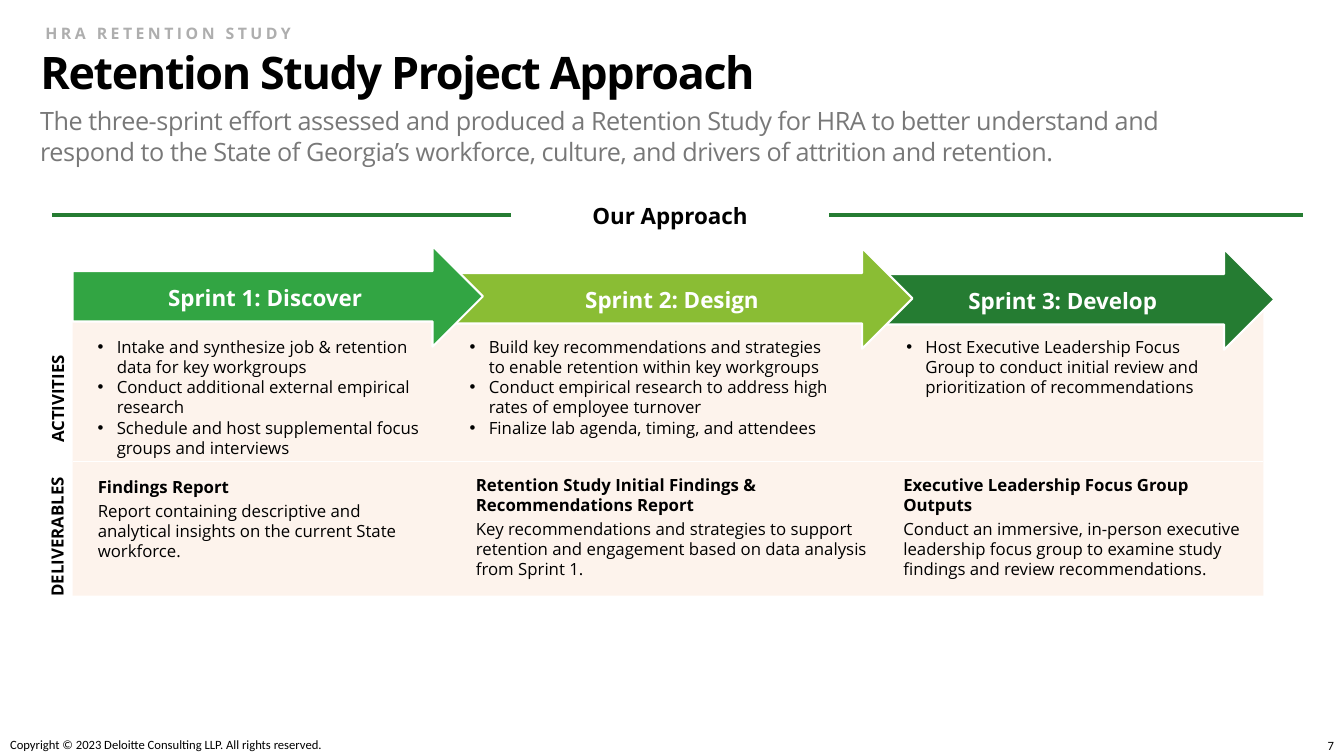
import pptx
import pptx.util
import pptx.dml.color
import pptx.enum.shapes
import pptx.enum.text
import pptx.oxml
import pptx.oxml.ns

Pt = pptx.util.Pt
Kind = pptx.enum.shapes.MSO_SHAPE
Align = pptx.enum.text.PP_ALIGN
Anchor = pptx.enum.text.MSO_ANCHOR
qn = pptx.oxml.ns.qn

COLORS = {
    "black": "000000", "white": "FFFFFF", "gray": "787878", "pale": "AEAEAE",
    "cream": "FCE6D6", "green": "32A543", "lime": "8ABD34", "forest": "257C32",
}
INSET = (1, 0.5, 1, 0.5)
TIGHT = (0.5, 0.5, 0.5, 0.5)
NONE = (0, 0, 0, 0)


def paint(name):
    return pptx.dml.color.RGBColor.from_string(COLORS[name])


def child(parent, tag, **attrs):
    node = parent.makeelement(qn(tag), attrs)
    parent.append(node)
    return node


class Board:
    """Draws on one slide; every length counts cells of a 0.1 inch grid."""

    def __init__(self, deck, font="Open Sans"):
        self.slide = deck.slides.add_slide(deck.slide_layouts[5])
        self.shapes = self.slide.shapes
        self.font = font

    def cells(self, *counts):
        return [pptx.util.Inches(count / 10) for count in counts]

    def label(self, shape, lines, size=12, color="black", bold=False, align=Align.LEFT,
              anchor=Anchor.TOP, inset=INSET, track=0, font=None, space=None,
              gap=0, bullet=False):
        """Fill a shape; each line is text or a (text, bold) pair."""
        frame = shape.text_frame
        frame.word_wrap = True
        frame.auto_size = pptx.enum.text.MSO_AUTO_SIZE.NONE
        frame.vertical_anchor = anchor
        (frame.margin_left, frame.margin_top,
         frame.margin_right, frame.margin_bottom) = self.cells(*inset)
        for i, line in enumerate(lines):
            text, heavy = (line, bold) if isinstance(line, str) else line
            para = frame.add_paragraph() if i else frame.paragraphs[0]
            para.alignment = align
            para.space_before = Pt(gap if i else 0)
            if space:
                para.line_spacing = space
            if bullet:
                props = para._p.get_or_add_pPr()
                indent = pptx.util.Inches(0.19)
                props.set("marL", str(indent))
                props.set("indent", str(-indent))
                child(props, "a:buFont", typeface="Arial")
                child(props, "a:buChar", char="•")
            run = para.add_run()
            run.text = text
            run.font.name = font or self.font
            run.font.size = Pt(size)
            run.font.bold = heavy
            run.font.color.rgb = paint(color)
            if track:
                run._r.get_or_add_rPr().set("spc", str(round(track * 100)))

    def title(self, box, text, **style):
        shape = self.shapes.title
        shape.left, shape.top, shape.width, shape.height = self.cells(*box)
        self.label(shape, [text], anchor=Anchor.MIDDLE, **style)

    def text(self, box, *lines, **style):
        self.label(self.shapes.add_textbox(*self.cells(*box)), lines, **style)

    def side(self, mid, row, length, text):
        """Label that reads upward, centred on a column and row."""
        box = self.cells(mid - length / 2, row - 1.5, length, 3)
        shape = self.shapes.add_textbox(*box)
        shape.rotation = 270
        self.label(shape, [text], bold=True)

    def block(self, kind, box, fill, edge=None, alpha=None):
        shape = self.shapes.add_shape(kind, *self.cells(*box))
        shape.shadow.inherit = False
        shape.fill.solid()
        shape.fill.fore_color.rgb = paint(fill)
        if alpha:
            tint = shape._element.spPr.find(qn("a:solidFill"))[0]
            child(tint, "a:alpha", val=str(alpha * 1000))
        if edge:
            shape.line.color.rgb = paint(edge)
            shape.line.width = Pt(1.5)
        else:
            shape.line.fill.background()
        return shape

    def rule(self, left, right, row, color, width):
        line = self.shapes.add_connector(
            pptx.enum.shapes.MSO_CONNECTOR.STRAIGHT, *self.cells(left, row, right, row))
        line.line.color.rgb = paint(color)
        line.line.width = Pt(width)
        child(line._element.spPr, "a:effectLst")


# Each sprint: name, colour, arrow box, activities box and list, deliverable box and pair
SPRINTS = [
    ("Sprint 1: Discover", "green", (7.2, 24.4, 40.7, 10),
     (8.7, 32.9, 35, 13.1),
     ["Intake and synthesize job & retention data for key workgroups",
      "Conduct additional external empirical research",
      "Schedule and host supplemental focus groups and interviews"],
     (9.2, 46.8, 34.3, 9.5),
     ("Findings Report",
      "Report containing descriptive and analytical insights on the current State workforce.")),
    ("Sprint 2: Design", "lime", (45.3, 24.6, 45.2, 10),
     (45.6, 32.9, 37.2, 11.1),
     ["Build key recommendations and strategies to enable retention within key workgroups",
      "Conduct empirical research to address high rates of employee turnover",
      "Finalize lab agenda, timing, and attendees"],
     (46.7, 46.6, 40.2, 11.5),
     ("Retention Study Initial Findings & Recommendations Report",
      "Key recommendations and strategies to support retention and engagement "
      "based on data analysis from Sprint 1.")),
    ("Sprint 3: Develop", "forest", (86.9, 24.7, 39.5, 10),
     (88.9, 32.9, 31.5, 7.1),
     ["Host Executive Leadership Focus Group to conduct initial review and "
      "prioritization of recommendations"],
     (89.1, 46.6, 35.7, 11.4),
     ("Executive Leadership Focus Group Outputs",
      "Conduct an immersive, in-person executive leadership focus group to examine "
      "study findings and review recommendations.")),
]


def main():
    deck = pptx.Presentation()
    deck.slide_width = pptx.util.Inches(13.33)
    deck.slide_height = pptx.util.Inches(7.5)
    board = Board(deck)

    # Heading
    board.text((4.5, 2.3, 46, 2.1), "HRA RETENTION STUDY", size=11.3, color="pale",
               bold=True, track=2.5, inset=NONE)
    board.title((3, 3.7, 115, 7.5), "Retention Study Project Approach",
                size=32, bold=True, track=-1, space=0.9)
    board.text((3, 10, 122.3, 7),
               "The three-sprint effort assessed and produced a Retention Study for HRA to "
               "better understand and respond to the State of Georgia’s workforce, culture, "
               "and drivers of attrition and retention.",
               size=18, color="gray", track=-0.3)

    # Section banner
    board.rule(5.2, 129.2, 21.3, "forest", 3)
    banner = board.block(Kind.RECTANGLE, (50.7, 19.6, 31.5, 3.7), "white")
    board.label(banner, ["Our Approach"], size=16, bold=True, align=Align.CENTER)

    # Panel with its two rows
    board.block(Kind.RECTANGLE, (7.2, 30.7, 118.1, 28.4), "cream", alpha=46)
    board.rule(7.2, 125.3, 45.8, "white", 1)
    board.side(5.7, 38.2, 13.4, "ACTIVITIES")
    board.side(5.65, 52.1, 16.1, "DELIVERABLES")

    # Arrows, last first so that each tip lies over the next
    for name, color, box, *_ in reversed(SPRINTS):
        arrow = board.block(Kind.RIGHT_ARROW, box, color, edge="white")
        board.label(arrow, [name], size=16, color="white", bold=True, align=Align.CENTER,
                    anchor=Anchor.MIDDLE, inset=(1, 1, 1, 1), space=1.06)

    # Activities and deliverables
    for _, _, _, spot, tasks, place, (head, body) in SPRINTS:
        board.text(spot, *tasks, bullet=True, inset=(1, 0.5, 0.5, 0.5))
        board.text(place, (head, True), body, gap=2.4, inset=TIGHT)

    # Footer
    board.text((1, 73.3, 58.6, 1.4),
               "Copyright © 2023 Deloitte Consulting LLP. All rights reserved.",
               size=9, font="Calibri", inset=NONE, space=Pt(9.5))
    board.text((128.9, 73.2, 3.4, 1.5), "7", size=9, font="Calibri",
               align=Align.RIGHT, inset=NONE)

    deck.save("out.pptx")


if __name__ == "__main__":
    main()
